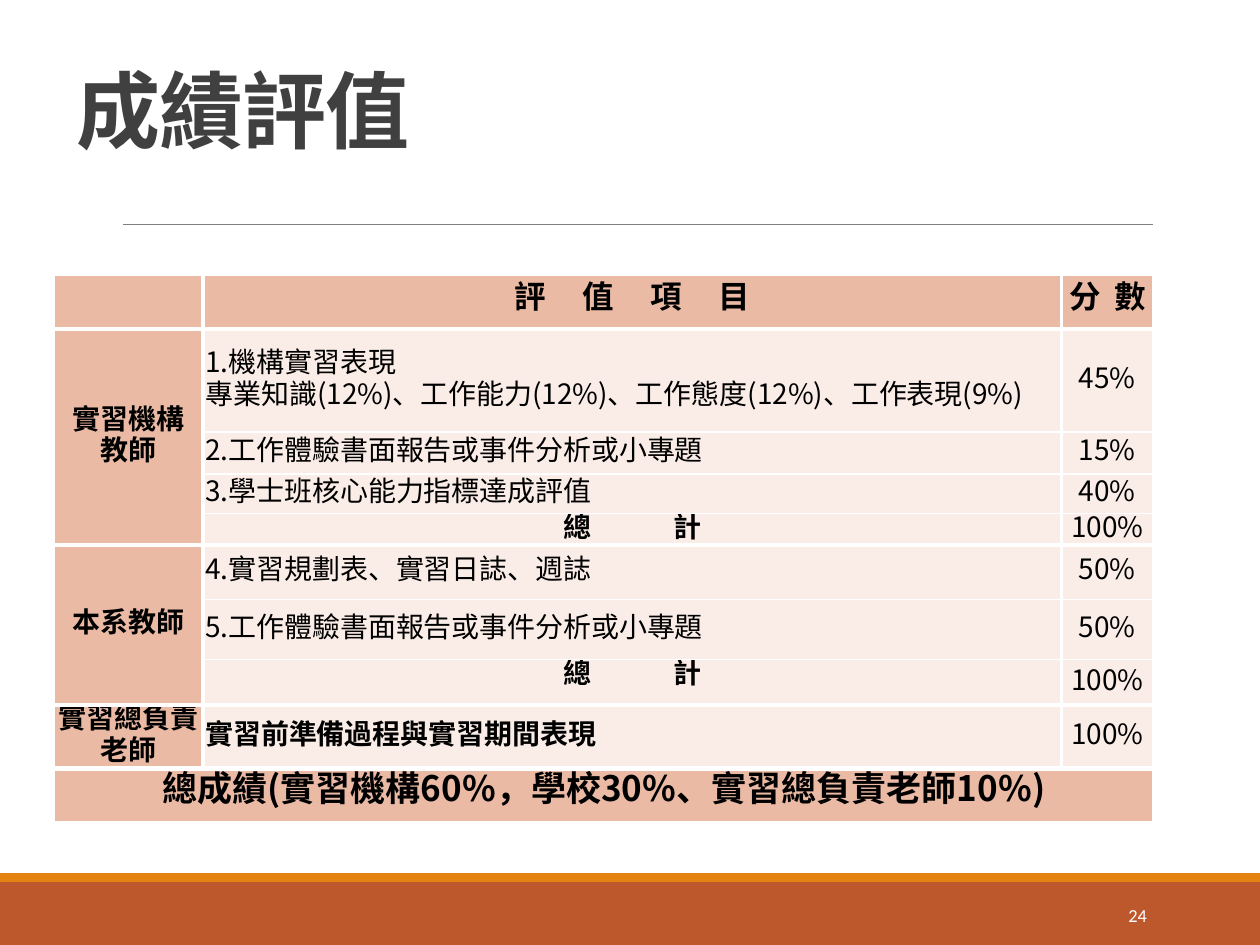
import pptx
import pptx.dml.color
import pptx.enum.shapes
import pptx.enum.text
import pptx.oxml
import pptx.oxml.ns
import pptx.util
from lxml import etree

Pt = pptx.util.Pt
ALIGN = pptx.enum.text.PP_ALIGN
ANCHOR = pptx.enum.text.MSO_ANCHOR
SHAPE = pptx.enum.shapes.MSO_SHAPE
CJK = "Noto Sans CJK SC"
qn = pptx.oxml.ns.qn


def color(value):
    return pptx.dml.color.RGBColor.from_string(value)


def write(frame, text, size=16, bold=False, fill="000000", font=CJK,
          align=ALIGN.LEFT, line=Pt(18), spread=0):
    """Write one paragraph per line; spread widens all gaps between characters."""
    for number, content in enumerate(text.split("\n")):
        paragraph = frame.paragraphs[0] if number == 0 else frame.add_paragraph()
        paragraph.alignment = align
        paragraph.line_spacing = line
        # The last character carries no extra gap, so centring stays true
        parts = [(content[:-1], spread), (content[-1], 0)] if spread > 0 else [(content, spread)]
        for part, gap in parts:
            run = paragraph.add_run()
            run.text = part
            run.font.size = Pt(size)
            run.font.bold = bold
            run.font.name = font
            run.font.color.rgb = color(fill)
            properties = run.font._element
            etree.SubElement(properties, qn("a:ea")).set("typeface", font)
            if gap:
                properties.set("spc", str(round(gap * 100)))


presentation = pptx.Presentation()
presentation.slide_width, presentation.slide_height = Pt(720), Pt(540)
slide = presentation.slides.add_slide(presentation.slide_layouts[6])

# Footer bands
for top, height, fill in ((504, 36, "BD582C"), (499, 5, "E48312")):
    band = slide.shapes.add_shape(SHAPE.RECTANGLE, 0, Pt(top), Pt(720), Pt(height))
    band.shadow.inherit = False
    band.fill.solid()
    band.fill.fore_color.rgb = color(fill)
    band.line.fill.background()

# Rule under the title
rule = slide.shapes.add_connector(
    pptx.enum.shapes.MSO_CONNECTOR.STRAIGHT, Pt(70.5), Pt(128), Pt(659), Pt(128))
rule.line.color.rgb = color("808080")
rule.line.width = Pt(0.5)
etree.SubElement(rule._element.spPr, qn("a:effectLst"))

# Title and slide number
title = slide.shapes.add_textbox(Pt(36.7), Pt(26), Pt(228), Pt(69)).text_frame
title.word_wrap = True
title.vertical_anchor = ANCHOR.BOTTOM
write(title, "成績評值", size=48, bold=True, fill="404040", line=0.85, spread=-0.5)
page = slide.shapes.add_textbox(Pt(584.6), Pt(508.3), Pt(77.8), Pt(28.8)).text_frame
page.word_wrap = True
page.vertical_anchor = ANCHOR.MIDDLE
write(page, "24", size=10.5, fill="FFFFFF", font="Calibri", align=ALIGN.RIGHT, line=1.0)

# Table content: group, item, score
DARK, LIGHT = "EABAA5", "FAEDE7"
rows = [
    ("", "評 值 項 目", "分 數"),
    ("實習機構\n教師", "1.機構實習表現\n專業知識(12%)、工作能力(12%)、工作態度(12%)、工作表現(9%)", "45%"),
    ("", "2.工作體驗書面報告或事件分析或小專題", "15%"),
    ("", "3.學士班核心能力指標達成評值", "40%"),
    ("", "總 計", "100%"),
    ("本系教師", "4.實習規劃表、實習日誌、週誌", "50%"),
    ("", "5.工作體驗書面報告或事件分析或小專題", "50%"),
    ("", "總 計", "100%"),
    ("實習總負責老師", "實習前準備過程與實習期間表現", "100%"),
    ("總成績(實習機構60%，學校30%、實習總負責老師10%)", "", ""),
]
row_heights = [31, 59, 24, 22.5, 18, 31, 34.5, 26, 36, 31.5]
column_widths = [85, 490.5, 52.5]
horizontal_rules = [1, 2.25, 1, 1, 1, 2.25, 1, 1, 3, 3, 3]
vertical_rules = [1, 2.25, 2.25, 1]
spreads = {"評 值 項 目": 8.4, "分 數": 1.8, "總 計": 21.6}
last = len(rows) - 1

table = slide.shapes.add_table(len(rows), 3, Pt(31), Pt(157), Pt(628), Pt(313.5)).table
table.first_row = table.horz_banding = False
for column, width in zip(table.columns, column_widths):
    column.width = Pt(width)
for row, height in zip(table.rows, row_heights):
    row.height = Pt(height)
for top, left, bottom, right in ((1, 0, 4, 0), (5, 0, 7, 0), (last, 0, last, 2)):
    table.cell(top, left).merge(table.cell(bottom, right))

for r, texts in enumerate(rows):
    for c, text in enumerate(texts):
        cell = table.cell(r, c)
        cell.margin_left = cell.margin_right = Pt(1.4)
        cell.margin_top = cell.margin_bottom = 0
        cell.vertical_anchor = ANCHOR.TOP if (r, c) == (7, 1) else ANCHOR.MIDDLE

        # White borders, taken from the far edge of a merged cell
        end_row = r + (cell.span_height if cell.is_merge_origin else 1)
        end_column = c + (cell.span_width if cell.is_merge_origin else 1)
        edges = (("L", vertical_rules[c]), ("R", vertical_rules[end_column]),
                 ("T", horizontal_rules[r]), ("B", horizontal_rules[end_row]))
        cell_properties = cell._tc.get_or_add_tcPr()
        for side, weight in edges:
            border = etree.SubElement(cell_properties, qn("a:ln" + side), w=str(Pt(weight)))
            solid = etree.SubElement(border, qn("a:solidFill"))
            etree.SubElement(solid, qn("a:srgbClr"), val="FFFFFF")

        heading = r in (0, last) or c == 0
        cell.fill.solid()
        cell.fill.fore_color.rgb = color(DARK if heading else LIGHT)
        if text:
            spread = spreads.get(text, 0)
            centred = heading or c == 2 or spread
            justified = ALIGN.LEFT if r in (3, 8) else ALIGN.JUSTIFY
            write(cell.text_frame, text, size={0: 18, last: 20}.get(r, 16),
                  bold=bool(heading or spread or (r, c) == (8, 1)),
                  align=ALIGN.CENTER if centred else justified, spread=spread)

presentation.save("out.pptx")
